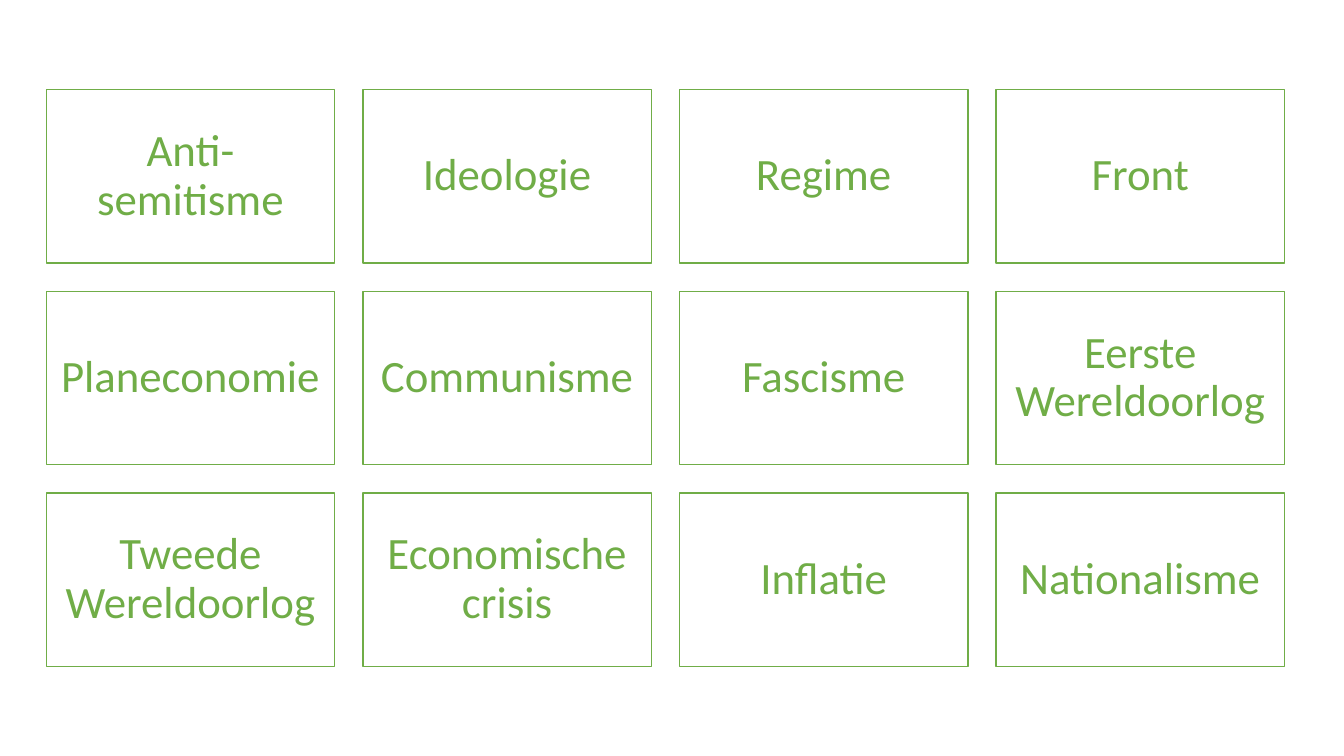
from pptx import Presentation
from pptx.dml.color import RGBColor
from pptx.enum.shapes import MSO_SHAPE
from pptx.enum.text import MSO_ANCHOR, PP_ALIGN
from pptx.util import Inches, Pt

TERMS = [
    ["Anti-semitisme", "Ideologie", "Regime", "Front"],
    ["Planeconomie", "Communisme", "Fascisme", "Eerste Wereldoorlog"],
    ["Tweede Wereldoorlog", "Economische crisis", "Inflatie", "Nationalisme"],
]
LEFT, TOP = 0.46, 0.89
CARD_W, CARD_H = 2.86, 1.72
GAP = 0.28


def rgb(value):
    return RGBColor.from_string(value)


class TermSlide:
    font = "Calibri"
    size = 32
    green = "70AD47"
    white = "FFFFFF"
    inset = 0.13

    def __init__(self, slide):
        self.slide = slide

    def card(self, text, x, y, w, h):
        """Add an outlined box with one centred term."""
        s = self.slide.shapes.add_shape(
            MSO_SHAPE.RECTANGLE, Inches(x), Inches(y), Inches(w), Inches(h))
        s.shadow.inherit = False
        s.fill.solid()
        s.fill.fore_color.rgb = rgb(self.white)
        s.line.color.rgb = rgb(self.green)
        s.line.width = Pt(1)
        tf = s.text_frame
        tf.word_wrap = True
        tf.vertical_anchor = MSO_ANCHOR.MIDDLE
        tf.margin_left = tf.margin_right = Inches(self.inset)
        tf.margin_top = tf.margin_bottom = Inches(self.inset)
        p = tf.paragraphs[0]
        p.text = text
        p.alignment = PP_ALIGN.CENTER
        p.line_spacing = 0.9
        p.font.name = self.font
        p.font.size = Pt(self.size)
        p.font.color.rgb = rgb(self.green)


def main():
    prs = Presentation()
    prs.slide_width, prs.slide_height = Inches(13.33), Inches(7.5)
    page = TermSlide(prs.slides.add_slide(prs.slide_layouts[6]))
    for row, terms in enumerate(TERMS):
        for col, term in enumerate(terms):
            page.card(term, LEFT + col * (CARD_W + GAP),
                      TOP + row * (CARD_H + GAP), CARD_W, CARD_H)
    prs.save("out.pptx")


if __name__ == "__main__":
    main()
